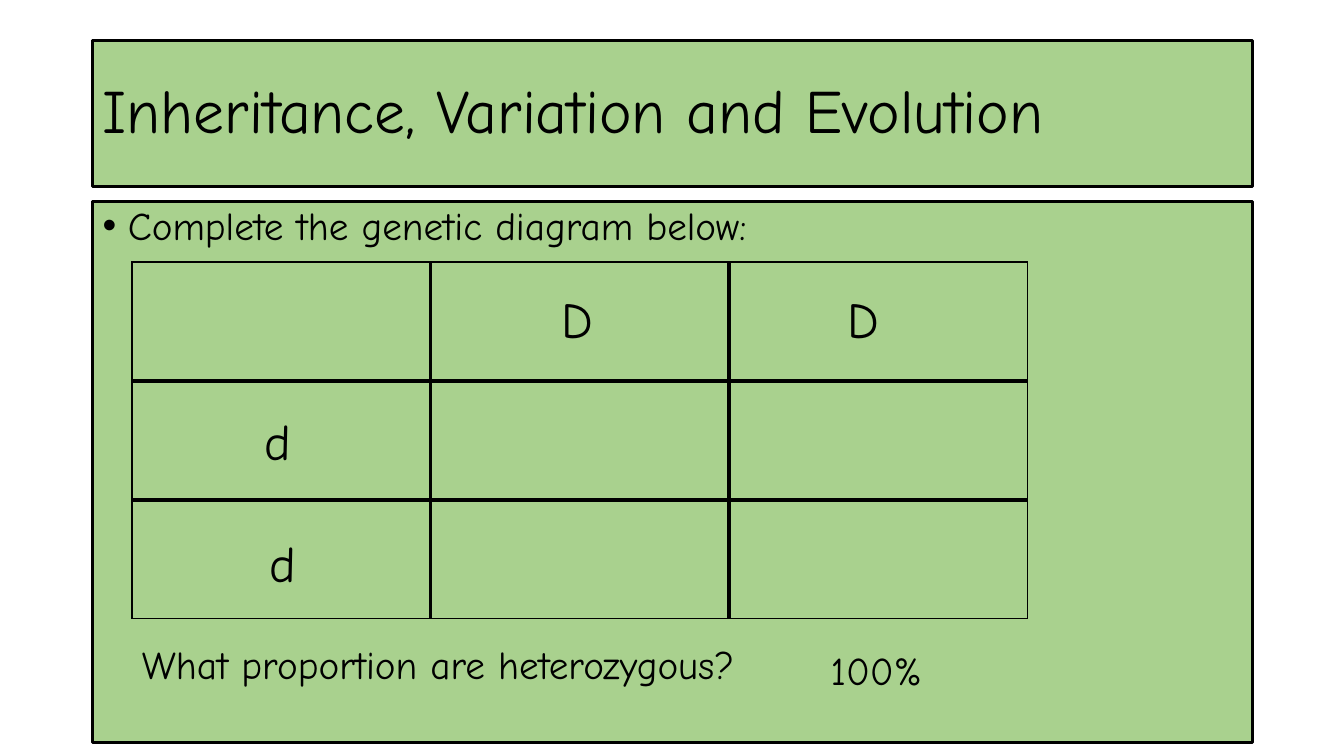
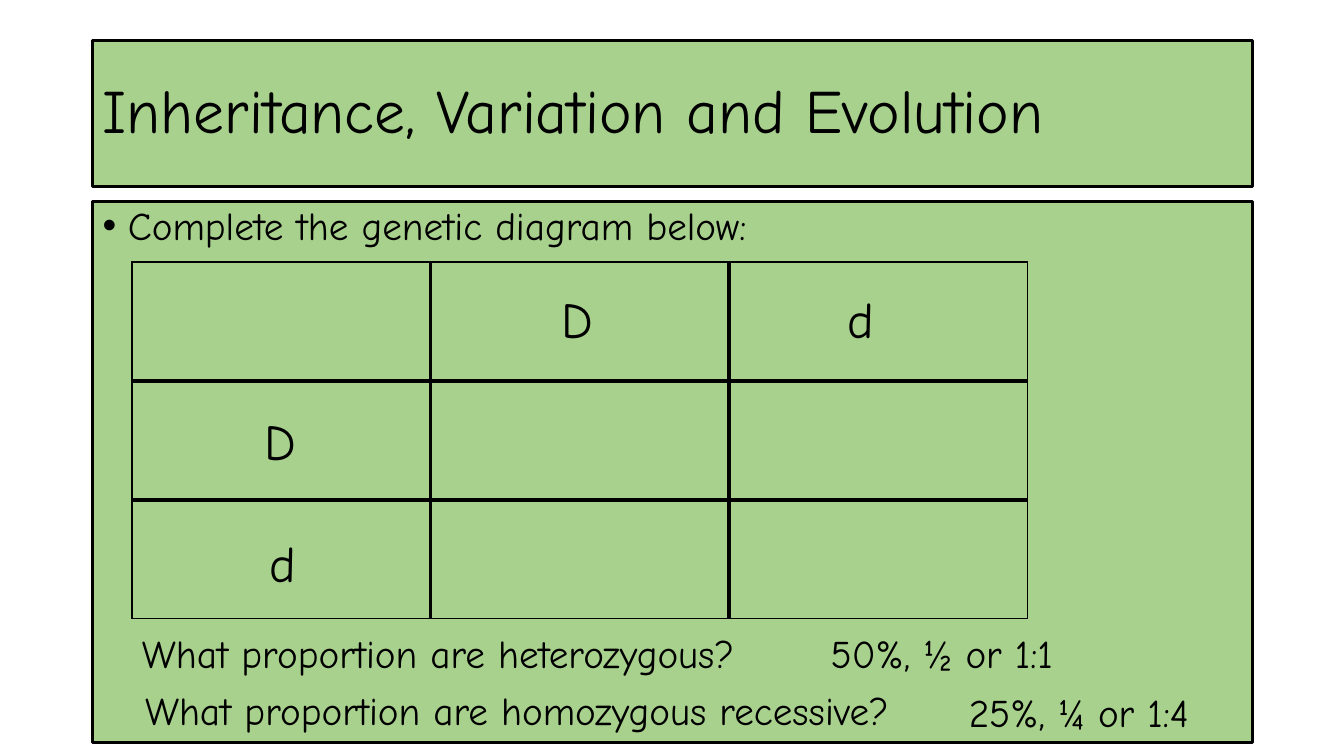
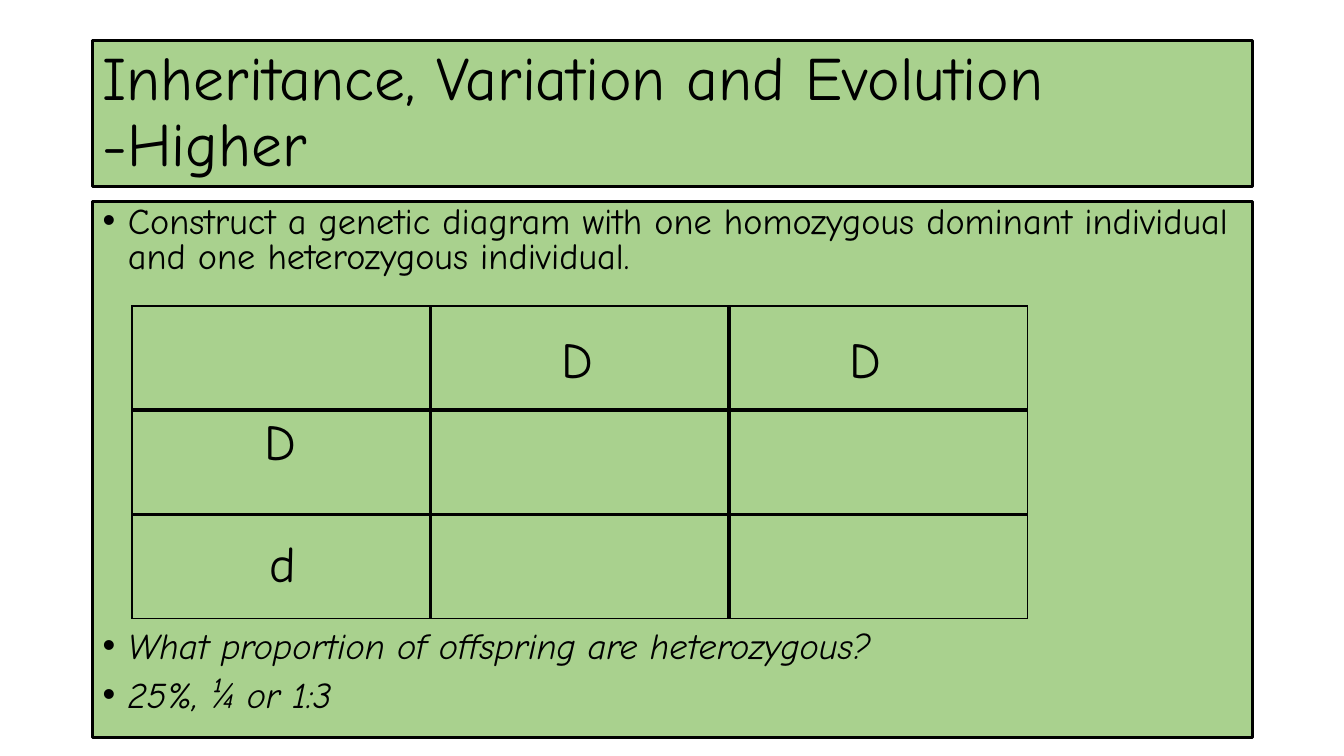
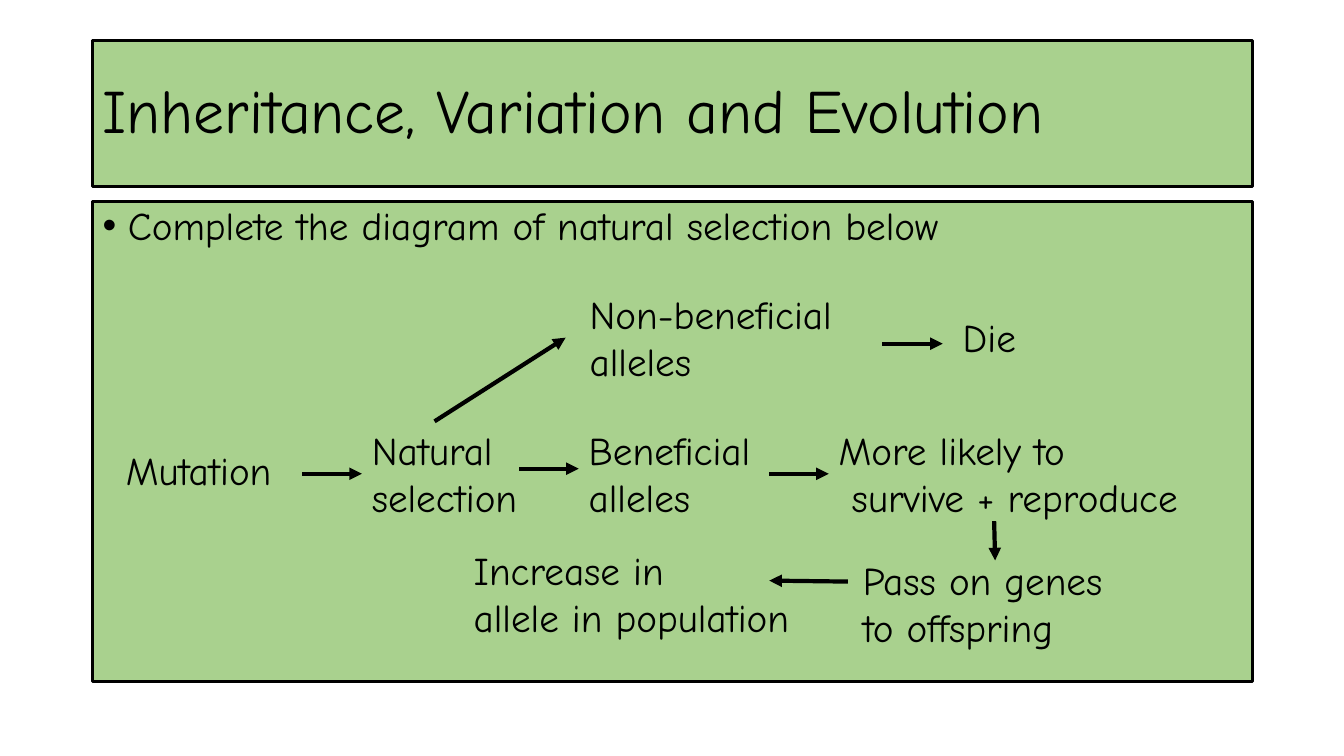
from lxml import etree
from pptx import Presentation
from pptx.dml.color import RGBColor
from pptx.enum.shapes import MSO_CONNECTOR, MSO_SHAPE
from pptx.enum.text import MSO_ANCHOR, MSO_AUTO_SIZE, PP_ALIGN
from pptx.oxml import parse_xml
from pptx.oxml.ns import nsdecls, qn
from pptx.util import Inches, Pt

RECT = MSO_SHAPE.RECTANGLE
STRAIGHT = MSO_CONNECTOR.STRAIGHT
TOP, MIDDLE = MSO_ANCHOR.TOP, MSO_ANCHOR.MIDDLE
LEFT = PP_ALIGN.LEFT
GROW = MSO_AUTO_SIZE.SHAPE_TO_FIT_TEXT

FONT = "Comic Neue"
BLACK, GREEN = "000000", "A9D18E"
PANEL_LEFT, PANEL_WIDTH = 0.92, 11.5
TITLE = "Inheritance, Variation and Evolution"
TITLE_FORMAT = {"line_spacing": 0.9}
BULLET = {"line_spacing": 0.9, "space_before": Pt(10)}
TIGHT = {"line_spacing": 0.8, "space_before": Pt(10)}
AFTER_TABLE = {"line_spacing": 0.8, "space_before": Pt(254)}
PLAIN, ITALIC = {"size": Pt(28)}, {"size": Pt(28), "italic": True}
LETTER, SMALL = {"size": Pt(36)}, {"size": Pt(25.9)}
SMALL_ITALIC = {"size": Pt(25.9), "italic": True}
LETTER_WIDTH = {"D": 0.57, "d": 0.5}
TABLE_LEFT, TABLE_BOTTOM, COLUMN = 1.31, 6.14, 2.96
OUTER, INNER = 1, 3

COMPLETE = [("Complete the genetic diagram below:", BULLET, PLAIN)]
SLIDES = [
    {
        "title": TITLE, "height": 5.37, "body": COMPLETE, "row": 1.18,
        "letters": [("D", 5.47, 2.81), ("d", 2.53, 4.02),
                    ("D", 8.31, 2.81), ("d", 2.57, 5.23)],
        "labels": [("What proportion are heterozygous?", 1.31, 6.3, 6.78),
                   ("100%", 8.14, 6.36, 1.18)],
    },
    {
        "title": TITLE, "height": 5.37, "body": COMPLETE, "row": 1.18,
        "letters": [("D", 5.47, 2.81), ("D", 2.53, 4.02),
                    ("d", 8.31, 2.81), ("d", 2.57, 5.23)],
        "labels": [("What proportion are heterozygous?", 1.31, 6.19, 6.78),
                   ("What proportion are homozygous recessive?", 1.34, 6.76, 8.32),
                   ("50%, ½ or 1:1", 8.14, 6.19, 2.65),
                   ("25%, ¼ or 1:4", 9.51, 6.78, 2.65)],
    },
    {
        "title": TITLE + " -Higher", "height": 5.32, "row": 1.035,
        "body": [("Construct a genetic diagram with one homozygous dominant "
                  "individual and one heterozygous individual.", TIGHT, SMALL),
                 ("What proportion of offspring are heterozygous?",
                  AFTER_TABLE, SMALL_ITALIC),
                 ("25%, ¼ or 1:3", TIGHT, SMALL_ITALIC)],
        "letters": [("D", 5.47, 3.21), ("D", 2.53, 4.02),
                    ("D", 8.33, 3.21), ("d", 2.57, 5.23)],
    },
    {
        "title": TITLE, "height": 4.76,
        "body": [("Complete the diagram of natural selection below", BULLET, PLAIN)],
        "labels": [("Mutation", 1.15, 4.38, 1.85),
                   ("Natural\nselection", 3.59, 4.18, 1.84),
                   ("Non-beneficial\nalleles", 5.75, 2.83, 3.01),
                   ("Beneficial\nalleles", 5.74, 4.18, 2.12),
                   ("More likely to\n survive + reproduce", 8.22, 4.18, 3.96),
                   ("Pass on genes\nto offspring", 8.46, 5.47, 2.79),
                   ("Increase in\nallele in population", 4.6, 5.37, 3.55),
                   ("Die", 9.45, 3.06, 0.81)],
        "arrows": [(3, 4.7, 3.59, 4.7), (5.15, 4.65, 5.74, 4.65),
                   (7.63, 4.7, 8.22, 4.7), (4.31, 4.18, 5.61, 3.35),
                   (8.75, 3.41, 9.35, 3.41), (9.86, 5.17, 9.87, 5.56),
                   (8.41, 5.77, 7.63, 5.76)],
    },
]


def paint(fill, color):
    fill.solid()
    fill.fore_color.rgb = RGBColor.from_string(color)


def write(tf, paragraphs):
    for i, (text, layout, style) in enumerate(paragraphs):
        p = tf.add_paragraph() if i else tf.paragraphs[0]
        p.alignment = LEFT
        for name, value in layout.items():
            setattr(p, name, value)
        r = p.add_run()
        r.text = text
        for name, value in {"name": FONT, **style}.items():
            setattr(r.font, name, value)
        paint(r.font.fill, BLACK)


prs = Presentation()
prs.slide_width, prs.slide_height = Inches(13.33), Inches(7.5)

for data in SLIDES:
    s = prs.slides.add_slide(prs.slide_layouts[6])

    panels = [(0.4, 1.45, MIDDLE, [(data["title"], TITLE_FORMAT, {"size": Pt(44)})]),
              (2, data["height"], TOP, data["body"])]
    for top, height, anchor, paragraphs in panels:
        sp = s.shapes.add_shape(RECT, Inches(PANEL_LEFT), Inches(top),
                                Inches(PANEL_WIDTH), Inches(height))
        sp.shadow.inherit = False
        paint(sp.fill, GREEN)
        paint(sp.line.fill, BLACK)
        sp.line.width = Pt(2.25)
        tf = sp.text_frame
        tf.word_wrap = True
        tf.vertical_anchor = anchor
        write(tf, paragraphs)
    for p in tf.paragraphs:
        pPr = p._p.get_or_add_pPr()
        pPr.set("marL", str(Inches(0.25)))
        pPr.set("indent", str(Inches(-0.25)))
        etree.SubElement(pPr, qn("a:buFont")).set("typeface", "Arial")
        etree.SubElement(pPr, qn("a:buChar")).set("char", "•")

    if "row" in data:
        height = 3 * data["row"]
        table = s.shapes.add_table(3, 3, Inches(TABLE_LEFT), Inches(TABLE_BOTTOM - height),
                                   Inches(3 * COLUMN), Inches(height)).table
        table.first_row = table.horz_banding = False
        for i in range(3):
            table.columns[i].width = Inches(COLUMN)
            table.rows[i].height = Inches(data["row"])
            for j in range(3):
                cell = table.cell(i, j)
                tcPr = cell._tc.get_or_add_tcPr()
                outside = {"L": j == 0, "R": j == 2, "T": i == 0, "B": i == 2}
                for side, is_outer in outside.items():
                    width = Pt(OUTER if is_outer else INNER)
                    tcPr.append(parse_xml(
                        f'<a:ln{side} {nsdecls("a")} w="{width}"><a:solidFill>'
                        f'<a:srgbClr val="{BLACK}"/></a:solidFill></a:ln{side}>'))
                cell.fill.background()

    boxes = [(text, x, y, LETTER_WIDTH[text], 0.71, LETTER)
             for text, x, y in data.get("letters", [])]
    boxes += [(text, x, y, w, 1.04 if "\n" in text else 0.57, PLAIN)
              for text, x, y, w in data.get("labels", [])]
    for text, x, y, w, h, style in boxes:
        tf = s.shapes.add_textbox(Inches(x), Inches(y), Inches(w), Inches(h)).text_frame
        tf.word_wrap = False
        tf.auto_size = GROW
        write(tf, [(line, {}, style) for line in text.split("\n")])

    for ends in data.get("arrows", []):
        arrow = s.shapes.add_connector(STRAIGHT, *[Inches(v) for v in ends])
        paint(arrow.line.fill, BLACK)
        arrow.line.width = Pt(3)
        etree.SubElement(arrow.line._get_or_add_ln(), qn("a:tailEnd")).set("type", "triangle")
        etree.SubElement(arrow._element.spPr, qn("a:effectLst"))

prs.save("out.pptx")
